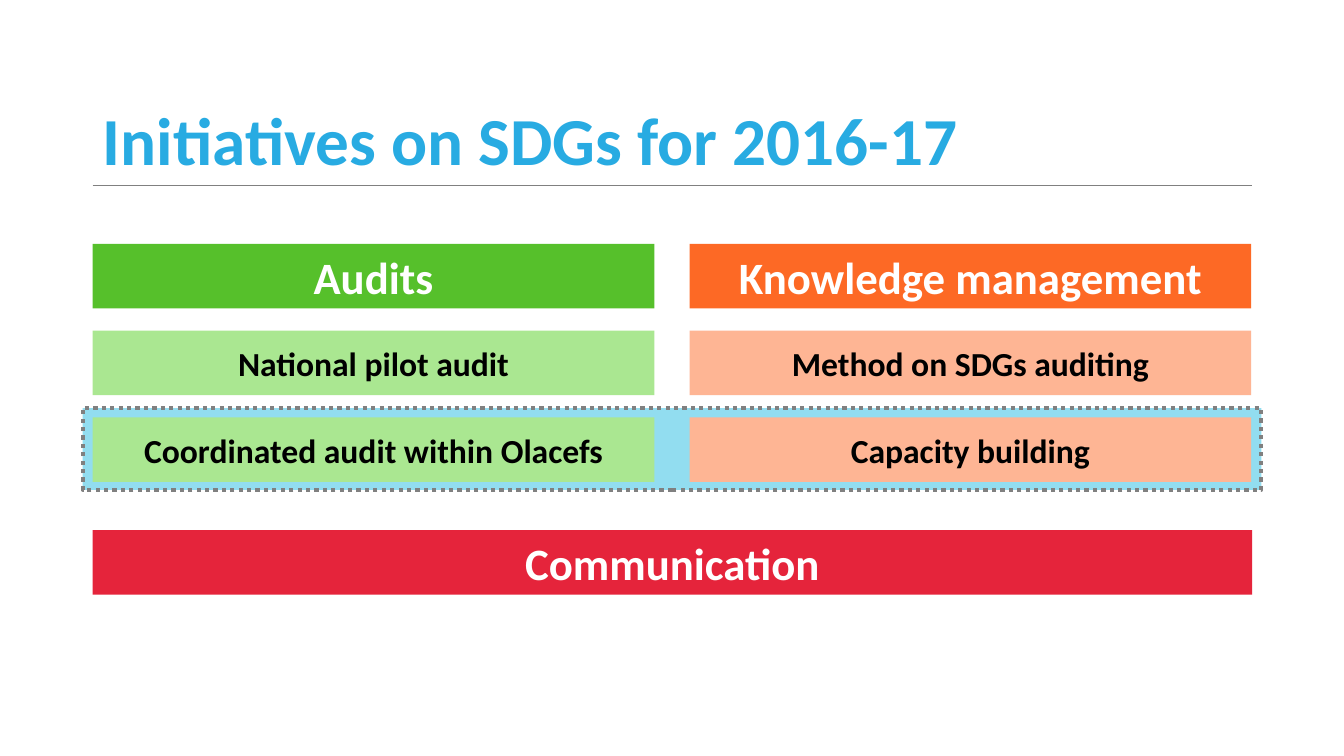
"""Build the slide on SDG initiatives for 2016-17."""
from dataclasses import dataclass

from lxml import etree
from pptx import Presentation
from pptx import util as u
from pptx.dml.color import RGBColor
from pptx.enum import dml, shapes, text
from pptx.oxml import ns


@dataclass(frozen=True)
class Theme:
    font: str = "Calibri"
    title: str = "28ABE2"
    rule: str = "808080"
    band: str = "26BDE2"
    light_text: str = "FFFFFF"
    dark_text: str = "000000"
    communication: str = "E5243B"
    title_size: int = 48
    heading_size: int = 32
    item_size: int = 24


@dataclass(frozen=True)
class Pillar:
    heading: str
    items: tuple[str, ...]
    heading_fill: str
    item_fill: str


THEME = Theme()
PILLARS = (
    Pillar("Audits", ("National pilot audit", "Coordinated audit within Olacefs"),
           "56C02B", "AAE791"),
    Pillar("Knowledge management", ("Method on SDGs auditing", "Capacity building"),
           "FD6925", "FEB594"),
)
LEFT, WIDTH = 0.92, 11.5
PILLAR_WIDTH, PILLAR_STEP = 5.57, 5.92
TOP, ROW_STEP, BAR_HEIGHT = 2.42, 0.86, 0.64


def style_text(frame, size: int, color: str) -> None:
    for paragraph in frame.paragraphs:
        for run in paragraph.runs:
            run.font.name = THEME.font
            run.font.size = u.Pt(size)
            run.font.bold = True
            run.font.color.rgb = RGBColor.from_string(color)


def add_rectangle(slide, left: float, top: float, width: float, height: float, fill: str):
    shape = slide.shapes.add_shape(
        shapes.MSO_SHAPE.RECTANGLE,
        u.Inches(left), u.Inches(top), u.Inches(width), u.Inches(height))
    shape.shadow.inherit = False
    shape.fill.solid()
    shape.fill.fore_color.rgb = RGBColor.from_string(fill)
    shape.line.fill.background()
    return shape


def add_bar(slide, left: float, top: float, width: float, label: str,
            fill: str, size: int, color: str) -> None:
    frame = add_rectangle(slide, left, top, width, BAR_HEIGHT, fill).text_frame
    frame.text = label
    frame.vertical_anchor = text.MSO_ANCHOR.MIDDLE
    frame.paragraphs[0].alignment = text.PP_ALIGN.CENTER
    style_text(frame, size, color)


def add_title(slide, title: str) -> None:
    shape = slide.shapes.title
    shape.left, shape.top = u.Inches(LEFT), u.Inches(0.89)
    shape.width, shape.height = u.Inches(WIDTH), u.Inches(0.95)
    frame = shape.text_frame
    frame.text = title
    frame.auto_size = text.MSO_AUTO_SIZE.NONE
    frame.vertical_anchor = text.MSO_ANCHOR.BOTTOM
    frame.paragraphs[0].alignment = text.PP_ALIGN.LEFT
    frame.paragraphs[0].line_spacing = 0.9
    style_text(frame, THEME.title_size, THEME.title)


def add_rule(slide, top: float) -> None:
    rule = slide.shapes.add_connector(
        shapes.MSO_CONNECTOR.STRAIGHT,
        u.Inches(LEFT), u.Inches(top), u.Inches(LEFT + WIDTH), u.Inches(top))
    rule.line.color.rgb = RGBColor.from_string(THEME.rule)
    rule.line.width = u.Pt(0.5)
    etree.SubElement(rule.element.spPr, ns.qn("a:effectLst"))


def add_highlight_band(slide) -> None:
    band = add_rectangle(slide, 0.82, 4.05, 11.69, 0.81, THEME.band)
    color = band.element.spPr.find(ns.qn("a:solidFill"))[0]
    etree.SubElement(color, ns.qn("a:alpha"), val="50000")
    band.line.color.rgb = RGBColor.from_string(THEME.rule)
    band.line.width = u.Pt(3)
    band.line.dash_style = dml.MSO_LINE.ROUND_DOT


def add_pillar(slide, pillar: Pillar, left: float) -> None:
    add_bar(slide, left, TOP, PILLAR_WIDTH, pillar.heading,
            pillar.heading_fill, THEME.heading_size, THEME.light_text)
    for row, item in enumerate(pillar.items, start=1):
        add_bar(slide, left, TOP + row * ROW_STEP, PILLAR_WIDTH, item,
                pillar.item_fill, THEME.item_size, THEME.dark_text)


def main() -> None:
    presentation = Presentation()
    presentation.slide_width = u.Inches(13.33)
    presentation.slide_height = u.Inches(7.5)
    slide = presentation.slides.add_slide(presentation.slide_layouts[5])
    add_title(slide, "Initiatives on SDGs for 2016-17")
    add_rule(slide, 1.84)
    add_highlight_band(slide)
    for column, pillar in enumerate(PILLARS):
        add_pillar(slide, pillar, LEFT + column * PILLAR_STEP)
    add_bar(slide, LEFT, 5.26, WIDTH, "Communication",
            THEME.communication, THEME.heading_size, THEME.light_text)
    presentation.save("out.pptx")


if __name__ == "__main__":
    main()
